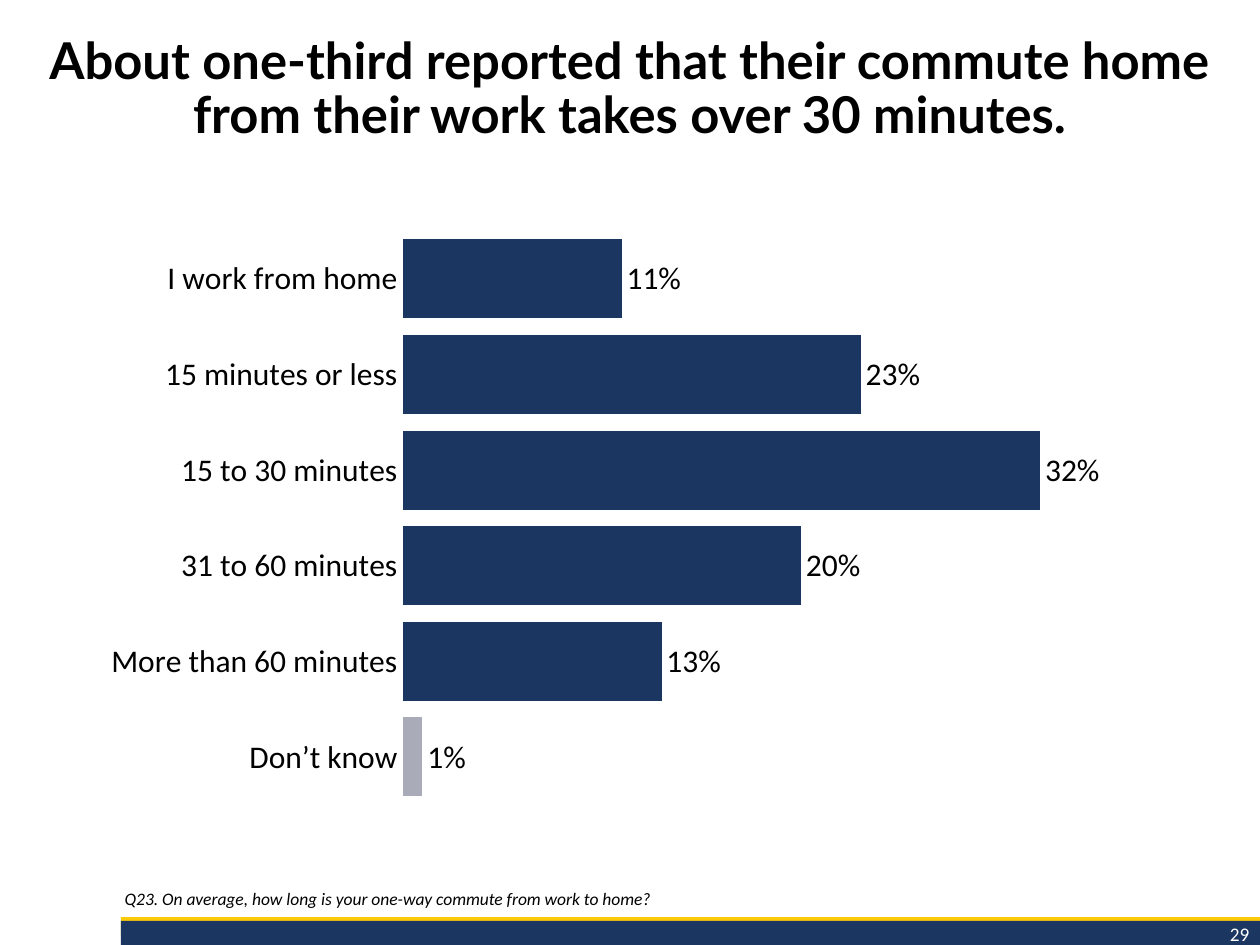
from dataclasses import dataclass

import pptx
import pptx.chart.data
import pptx.dml.color
import pptx.enum.chart
import pptx.enum.shapes
import pptx.enum.text
import pptx.oxml
import pptx.oxml.ns
import pptx.util

RGBColor = pptx.dml.color.RGBColor
BLACK = RGBColor(0x00, 0x00, 0x00)
WHITE = RGBColor(0xFF, 0xFF, 0xFF)
GOLD = RGBColor(0xFC, 0xCA, 0x09)
NAVY = RGBColor(0x1B, 0x36, 0x61)
BAR_NAVY = RGBColor(0x1B, 0x36, 0x60)
BAR_GREY = RGBColor(0xA9, 0xAB, 0xB8)

EMU_PER_PX = 914400 / 126
C_NS = "http://schemas.openxmlformats.org/drawingml/2006/chart"


@dataclass(frozen=True)
class Box:
    left: int
    top: int
    width: int
    height: int

    def emu(self) -> list[int]:
        return [px(n) for n in (self.left, self.top, self.width, self.height)]


@dataclass(frozen=True)
class Stripe:
    box: Box
    color: RGBColor


@dataclass(frozen=True)
class Answer:
    label: str
    share: float
    color: RGBColor = BAR_NAVY


@dataclass(frozen=True)
class TextStyle:
    font: str
    size: int
    color: RGBColor = BLACK
    bold: bool = False
    italic: bool = False


STRIPES = [
    Stripe(Box(121, 917, 1139, 20), GOLD),
    Stripe(Box(121, 921, 1139, 24), NAVY),
]
ANSWERS = [
    Answer("I work from home", 0.11),
    Answer("15 minutes or less", 0.23),
    Answer("15 to 30 minutes", 0.32),
    Answer("31 to 60 minutes", 0.20),
    Answer("More than 60 minutes", 0.13),
    Answer("Don’t know", 0.01, BAR_GREY),
]
PLOT_LAYOUT = {"x": 0.318, "y": 0.029, "w": 0.661, "h": 0.879}
CHART_STYLE = TextStyle("Calibri", 18)


def px(length: int) -> int:
    return round(length * EMU_PER_PX)


def style_font(font, style: TextStyle) -> None:
    font.name = style.font
    font.size = pptx.util.Pt(style.size)
    font.color.rgb = style.color
    font.bold = style.bold
    font.italic = style.italic


def place(shape, box: Box) -> None:
    shape.left, shape.top, shape.width, shape.height = box.emu()


def write(shape, text: str, style: TextStyle, align, anchor, spacing: float = 1.0) -> None:
    frame = shape.text_frame
    frame.text = text
    frame.word_wrap = True
    frame.auto_size = pptx.enum.text.MSO_AUTO_SIZE.NONE
    frame.vertical_anchor = anchor
    paragraph = frame.paragraphs[0]
    paragraph.alignment = align
    paragraph.line_spacing = spacing
    paragraph.space_before = pptx.util.Pt(0)
    properties = paragraph._p.get_or_add_pPr()
    properties.set("marL", "0")
    properties.set("indent", "0")
    pptx.oxml.ns.qn("a:buNone")
    properties.append(properties.makeelement(pptx.oxml.ns.qn("a:buNone"), {}))
    style_font(paragraph.font, style)


def draw_stripe(slide, stripe: Stripe) -> None:
    bar = slide.shapes.add_shape(
        pptx.enum.shapes.MSO_SHAPE.RECTANGLE, *stripe.box.emu())
    bar.shadow.inherit = False
    bar.fill.solid()
    bar.fill.fore_color.rgb = stripe.color
    bar.line.fill.background()


def fix_plot_area(chart) -> None:
    settings = "".join(
        [f'<c:{edge}Mode val="edge"/>' for edge in "xy"]
        + [f'<c:{key} val="{value}"/>' for key, value in PLOT_LAYOUT.items()])
    layout = pptx.oxml.parse_xml(
        f'<c:layout xmlns:c="{C_NS}"><c:manualLayout>'
        f'<c:layoutTarget val="inner"/>{settings}</c:manualLayout></c:layout>')
    plot_area = chart._chartSpace.chart.plotArea
    for automatic in plot_area.findall(pptx.oxml.ns.qn("c:layout")):
        plot_area.remove(automatic)
    plot_area.insert(0, layout)


def draw_commute_chart(slide, box: Box, answers: list[Answer]) -> None:
    data = pptx.chart.data.CategoryChartData(number_format="0%")
    data.categories = [answer.label for answer in answers]
    data.add_series("Series 1", [answer.share for answer in answers])
    chart = slide.shapes.add_chart(
        pptx.enum.chart.XL_CHART_TYPE.BAR_CLUSTERED, *box.emu(), data).chart
    chart.has_legend = False
    chart.has_title = False
    style_font(chart.font, TextStyle("Calibri", 10))
    fix_plot_area(chart)

    categories = chart.category_axis
    categories.reverse_order = True
    categories.major_tick_mark = pptx.enum.chart.XL_TICK_MARK.NONE
    categories.format.line.fill.background()
    style_font(categories.tick_labels.font, CHART_STYLE)

    shares = chart.value_axis
    shares.minimum_scale = 0
    shares.maximum_scale = 0.4
    shares.major_unit = 0.1
    shares.has_major_gridlines = False
    shares.visible = False

    plot = chart.plots[0]
    plot.gap_width = 21
    plot.vary_by_categories = False
    series = plot.series[0]
    series.format.fill.solid()
    series.format.fill.fore_color.rgb = BAR_NAVY
    for index, answer in enumerate(answers):
        if answer.color != BAR_NAVY:
            fill = series.points[index].format.fill
            fill.solid()
            fill.fore_color.rgb = answer.color

    labels = series.data_labels
    labels.show_value = True
    labels.number_format = "0%"
    labels.number_format_is_linked = False
    labels.position = pptx.enum.chart.XL_LABEL_POSITION.OUTSIDE_END
    style_font(labels.font, CHART_STYLE)


def main() -> None:
    align = pptx.enum.text.PP_ALIGN
    anchor = pptx.enum.text.MSO_ANCHOR
    deck = pptx.Presentation()
    deck.slide_width, deck.slide_height = px(1260), px(945)
    slide = deck.slides.add_slide(deck.slide_layouts[1])

    for stripe in STRIPES:
        draw_stripe(slide, stripe)

    page_number = slide.shapes.add_textbox(*Box(1076, 916, 186, 36).emu())
    write(page_number, "29", TextStyle("Calibri", 11, WHITE), align.RIGHT, anchor.TOP)

    headline = slide.shapes.title
    place(headline, Box(0, 29, 1260, 154))
    write(headline,
          "About one-third reported that their commute home from their work takes over 30 minutes.",
          TextStyle("Lato", 29, bold=True), align.CENTER, anchor.TOP, 0.9)

    question = slide.placeholders[1]
    place(question, Box(112, 848, 1145, 68))
    write(question, "Q23. On average, how long is your one-way commute from work to home?",
          TextStyle("Calibri", 10, italic=True), align.LEFT, anchor.BOTTOM, 0.9)

    draw_commute_chart(slide, Box(19, 212, 1206, 653), ANSWERS)
    deck.save("out.pptx")


if __name__ == "__main__":
    main()
